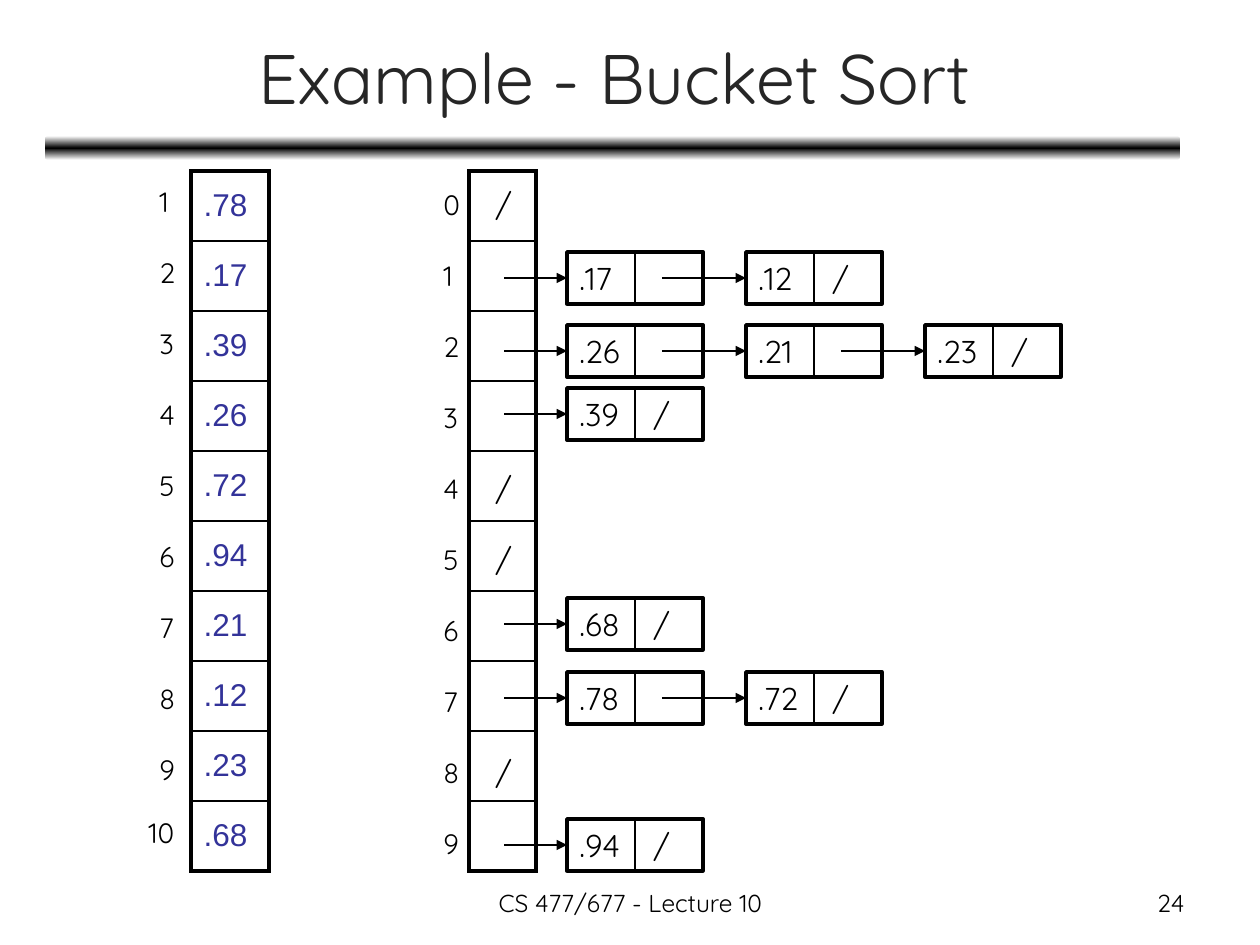
from dataclasses import dataclass
from copy import deepcopy

from lxml.etree import SubElement
from pptx import Presentation
from pptx.dml.color import RGBColor
from pptx.enum.shapes import MSO_CONNECTOR, MSO_SHAPE
from pptx.enum.text import MSO_ANCHOR, PP_ALIGN
from pptx.oxml import parse_xml
from pptx.oxml.ns import nsdecls, qn
from pptx.util import Emu, Pt


@dataclass(frozen=True)
class Theme:
    """Colours, fonts and point sizes of the slide."""
    black: RGBColor = RGBColor(0, 0, 0)
    white: RGBColor = RGBColor(255, 255, 255)
    title: RGBColor = RGBColor(0x26, 0x26, 0x26)
    value: RGBColor = RGBColor(0x33, 0x33, 0x99)
    font: str = "Quicksand"
    value_font: str = "Arial"
    title_size: int = 40
    body_size: int = 18
    label_size: int = 16
    footer_size: int = 14
    frame: float = 2.25
    rule: float = 1
    node: float = 2
    thin: float = 0.75


THEME = Theme()
EMU_PER_PX = 914400 / 126
INPUT = [".78", ".17", ".39", ".26", ".72", ".94", ".21", ".12", ".23", ".68"]
EMPTY_BUCKETS = [0, 4, 5, 8]
CHAINS = {
    252: [".17", ".12"],
    325: [".26", ".21", ".23"],
    388: [".39"],
    598: [".68"],
    672: [".78", ".72"],
    819: [".94"],
}
TABLE_TOP, ROW_HEIGHT, LABEL_STEP = 171, 70, 71
NODE_LEFT, NODE_STEP, NODE_WIDTH, NODE_HEIGHT = 567, 179, 136, 52
SLASH_TAB = 74


def px(length):
    """Turn a length in px into EMU."""
    return Emu(round(length * EMU_PER_PX))


def add_span(para, text, size, color=THEME.black, font=THEME.font):
    """Add one styled run to a paragraph."""
    span = para.add_run()
    span.text = text
    span.font.size = Pt(size)
    span.font.name = font
    span.font.color.rgb = color


def add_text(page, area, text, size, align=PP_ALIGN.LEFT, color=THEME.black,
             anchor=MSO_ANCHOR.TOP, wrap=True):
    """Add a text box with a single line."""
    box = page.shapes.add_textbox(*map(px, area))
    frame = box.text_frame
    frame.word_wrap = wrap
    frame.vertical_anchor = anchor
    para = frame.paragraphs[0]
    para.alignment = align
    add_span(para, text, size, color)


def add_title_bar(page, area):
    """Add the bar that fades from black to white above and below."""
    bar = page.shapes.add_shape(MSO_SHAPE.ROUNDED_RECTANGLE, *map(px, area))
    bar.shadow.inherit = False
    bar.line.fill.background()
    bar.fill.gradient()
    bar.fill.gradient_angle = 90
    stop_list = bar.element.spPr.find(qn("a:gradFill")).find(qn("a:gsLst"))
    stop_list.append(deepcopy(stop_list[0]))
    colors = [THEME.white, THEME.black, THEME.white]
    for stop, position, color in zip(bar.fill.gradient_stops, (0, 0.5, 1), colors):
        stop.position = position
        stop.color.rgb = color


def set_borders(cell, top, bottom):
    """Draw the four borders of a cell."""
    properties = cell._tc.get_or_add_tcPr()
    widths = {"lnL": THEME.frame, "lnR": THEME.frame, "lnT": top, "lnB": bottom}
    for index, (side, width) in enumerate(widths.items()):
        border = parse_xml(
            f'<a:{side} {nsdecls("a")} w="{Pt(width)}"><a:solidFill>'
            f'<a:srgbClr val="{THEME.black}"/></a:solidFill></a:{side}>')
        properties.insert(index, border)


def add_array(page, left, width, values):
    """Add a one-column table that holds an array."""
    count = len(values)
    area = (left, TABLE_TOP, width, ROW_HEIGHT * count)
    table = page.shapes.add_table(count, 1, *map(px, area)).table
    table.first_row = False
    table.horz_banding = False
    for index, value in enumerate(values):
        cell = table.cell(index, 0)
        cell.fill.background()
        cell.vertical_anchor = MSO_ANCHOR.MIDDLE
        set_borders(cell, THEME.rule if index else THEME.frame,
                    THEME.frame if index == count - 1 else THEME.rule)
        if value:
            add_span(cell.text_frame.paragraphs[0], value, THEME.body_size,
                     THEME.value, THEME.value_font)


def add_line(page, start, end, arrow=False):
    """Add a thin straight connector, with an arrowhead if asked."""
    line = page.shapes.add_connector(MSO_CONNECTOR.STRAIGHT, *map(px, start + end))
    line.line.color.rgb = THEME.black
    line.line.width = Pt(THEME.thin)
    if arrow:
        SubElement(line.line._get_or_add_ln(), qn("a:tailEnd"), type="triangle")
    SubElement(line._element.spPr, qn("a:effectLst"))
    return line


def add_node(page, left, top, value, last):
    """Add a list node with its value and pointer halves."""
    area = (left, top, NODE_WIDTH, NODE_HEIGHT)
    node = page.shapes.add_shape(MSO_SHAPE.RECTANGLE, *map(px, area))
    node.shadow.inherit = False
    node.fill.background()
    node.line.color.rgb = THEME.black
    node.line.width = Pt(THEME.node)
    frame = node.text_frame
    frame.word_wrap = True
    frame.vertical_anchor = MSO_ANCHOR.MIDDLE
    para = frame.paragraphs[0]
    para.alignment = PP_ALIGN.LEFT
    add_span(para, value, THEME.body_size)
    if last:
        tabs = SubElement(para._p.get_or_add_pPr(), qn("a:tabLst"))
        SubElement(tabs, qn("a:tab"), pos=str(px(SLASH_TAB)), algn="l")
        add_span(para, "\t/", THEME.body_size)
    middle = left + NODE_WIDTH // 2
    divider = add_line(page, (middle, top), (middle, top + NODE_HEIGHT))
    divider.begin_connect(node, 0)
    divider.end_connect(node, 2)
    return node


def add_chain(page, top, values):
    """Add the linked list of one bucket."""
    start = 504
    middle = top + NODE_HEIGHT // 2
    for index, value in enumerate(values):
        left = NODE_LEFT + NODE_STEP * index
        node = add_node(page, left, top, value, index == len(values) - 1)
        arrow = add_line(page, (start, middle), (left, middle), arrow=True)
        arrow.end_connect(node, 1)
        start = left + 95


def add_label(page, left, top, text, size=THEME.label_size, width=40):
    """Add a short mark beside or inside an array."""
    add_text(page, (left, top, width, 47), text, size, wrap=False)


def main():
    """Build the bucket sort slide."""
    deck = Presentation()
    deck.slide_width, deck.slide_height = px(1260), px(945)
    page = deck.slides.add_slide(deck.slide_layouts[6])
    add_title_bar(page, (45, 136, 1135, 24))
    add_text(page, (47, 14, 1134, 125), "Example - Bucket Sort", THEME.title_size,
             PP_ALIGN.CENTER, THEME.title, MSO_ANCHOR.MIDDLE)
    add_array(page, 191, 78, INPUT)
    add_array(page, 469, 67, [""] * 10)
    for index in range(10):
        add_label(page, 431, 181 + LABEL_STEP * index, str(index))
    for index in range(9):
        add_label(page, 147, 178 + LABEL_STEP * index, str(index + 1))
    add_label(page, 136, 809, "10", width=57)
    for top, values in CHAINS.items():
        add_chain(page, top, values)
    for index in EMPTY_BUCKETS:
        add_label(page, 483, 179 + LABEL_STEP * index, "/", THEME.body_size)
    add_text(page, (431, 882, 399, 44), "CS 477/677 - Lecture 10",
             THEME.footer_size, PP_ALIGN.CENTER)
    add_text(page, (903, 882, 294, 44), "24", THEME.footer_size, PP_ALIGN.RIGHT)
    deck.save("out.pptx")


if __name__ == "__main__":
    main()
